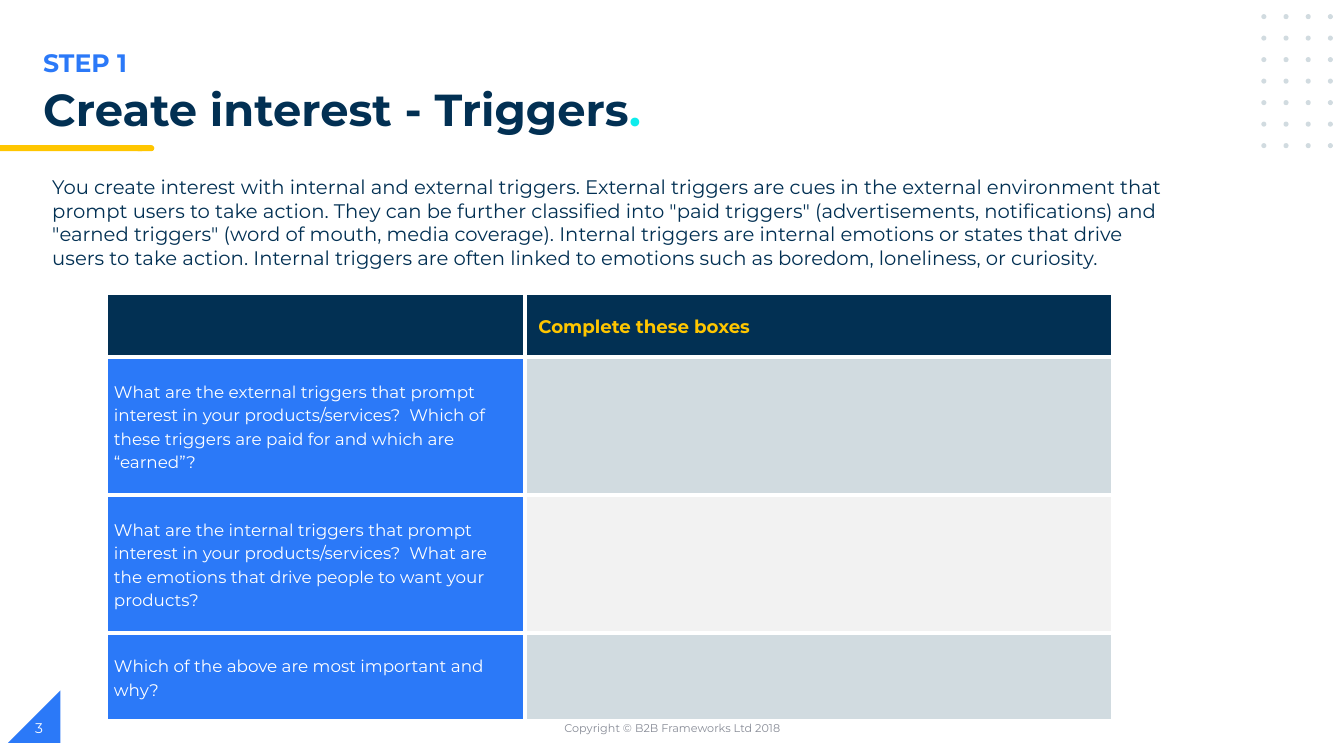
import pptx
import pptx.dml.color
import pptx.enum.shapes
import pptx.enum.text
import pptx.util
from lxml import etree
from pptx.oxml.ns import qn

Inches = pptx.util.Inches
Pt = pptx.util.Pt
SHAPES = pptx.enum.shapes.MSO_SHAPE
ANCHORS = pptx.enum.text.MSO_ANCHOR
ALIGN = pptx.enum.text.PP_ALIGN

COLORS = {
    "navy": "023053",
    "blue": "2B79F8",
    "yellow": "FFC600",
    "cyan": "0EECEC",
    "mist": "D1DBE0",
    "pale": "F2F2F2",
    "gray": "888C97",
    "white": "FFFFFF",
}

INTRO = (
    "You create interest with internal and external triggers. External triggers are cues "
    "in the external environment that prompt users to take action. They can be further "
    'classified into "paid triggers" (advertisements, notifications) and "earned triggers" '
    "(word of mouth, media coverage). Internal triggers are internal emotions or states that "
    "drive users to take action. Internal triggers are often linked to emotions such as "
    "boredom, loneliness, or curiosity."
)

# Height, question, answer, question fill, answer fill
TABLE_ROWS = [
    (0.63, "", "Complete these boxes", "navy", "navy"),
    (1.37, "What are the external triggers that prompt interest in your products/services?  "
     "Which of these triggers are paid for and which are “earned”?", "", "blue", "mist"),
    (1.37, "What are the internal triggers that prompt interest in your products/services?  "
     "What are the emotions that drive people to want your products?", "", "blue", "pale"),
    (0.87, "Which of the above are most important and why?", "", "blue", "mist"),
]


class SlideBuilder:
    """Holds the page being drawn and its text style."""

    def __init__(self, page, font_name="Montserrat"):
        self.page = page
        self.font_name = font_name

    def color(self, name):
        return pptx.dml.color.RGBColor.from_string(COLORS[name])

    def style_font(self, font, size, color, bold=False):
        font.name = self.font_name
        font.size = Pt(size)
        font.bold = bold
        font.color.rgb = self.color(color)

    def shape(self, kind, left, top, width, height, color, flip=False):
        shape = self.page.shapes.add_shape(
            kind, Inches(left), Inches(top), Inches(width), Inches(height))
        shape.shadow.inherit = False
        shape.fill.solid()
        shape.fill.fore_color.rgb = self.color(color)
        shape.line.fill.background()
        if flip:
            shape._element.spPr.get_or_add_xfrm().set("flipH", "1")

    def text(self, words, left, top, width, height, size, color, bold=False,
             align=ALIGN.LEFT, anchor=ANCHORS.TOP):
        """Add a one-paragraph text box and return the paragraph."""
        box = self.page.shapes.add_textbox(
            Inches(left), Inches(top), Inches(width), Inches(height))
        frame = box.text_frame
        frame.word_wrap = True
        frame.vertical_anchor = anchor
        frame.text = words
        para = frame.paragraphs[0]
        para.alignment = align
        self.style_font(para.runs[0].font, size, color, bold)
        return para

    def dot_grid(self, left, top, columns, rows, column_gap, row_gap):
        for row in range(rows):
            for column in range(columns):
                self.shape(SHAPES.OVAL, left + column * column_gap,
                           top + row * row_gap, 0.05, 0.05, "mist")

    def cell_borders(self, cell, color, width):
        properties = cell._tc.get_or_add_tcPr()
        for index, side in enumerate(("lnL", "lnR", "lnT", "lnB")):
            line = etree.Element(qn(f"a:{side}"), w=str(Pt(width)))
            fill = etree.SubElement(line, qn("a:solidFill"))
            etree.SubElement(fill, qn("a:srgbClr"), val=COLORS[color])
            properties.insert(index, line)

    def cell(self, cell, words, fill, size, color, bold, margin_left):
        cell.fill.solid()
        cell.fill.fore_color.rgb = self.color(fill)
        cell.vertical_anchor = ANCHORS.MIDDLE
        cell.margin_left = Inches(margin_left)
        cell.margin_right = Inches(0.08)
        cell.margin_top = cell.margin_bottom = 0
        self.cell_borders(cell, "white", 3)
        cell.text_frame.text = words
        para = cell.text_frame.paragraphs[0]
        para.line_spacing = 1.15
        self.style_font(para.font, size, color, bold)
        for span in para.runs:
            self.style_font(span.font, size, color, bold)

    def question_table(self, left, top, widths, rows):
        height = sum(row[0] for row in rows)
        frame = self.page.shapes.add_table(
            len(rows), len(widths), Inches(left), Inches(top),
            Inches(sum(widths)), Inches(height))
        table = frame.table
        table.first_row = table.horz_banding = False
        for column, width in zip(table.columns, widths):
            column.width = Inches(width)
        for index, (height, question, answer, question_fill, answer_fill) in enumerate(rows):
            table.rows[index].height = Inches(height)
            self.cell(table.cell(index, 0), question, question_fill, 12, "white", False, 0.08)
            self.cell(table.cell(index, 1), answer, answer_fill, 13, "yellow", True, 0.13)


def main():
    deck = pptx.Presentation()
    deck.slide_width = Inches(13.33)
    deck.slide_height = Inches(7.5)
    builder = SlideBuilder(deck.slides.add_slide(deck.slide_layouts[6]))

    builder.shape(SHAPES.RIGHT_TRIANGLE, 0.08, 6.85, 0.52, 0.52, "blue", flip=True)
    builder.shape(SHAPES.FLOWCHART_TERMINATOR, 1.34, 1.44, 0.19, 0.06, "yellow")
    builder.shape(SHAPES.RECTANGLE, 0, 1.44, 1.41, 0.06, "yellow")
    builder.dot_grid(12.51, 0.14, columns=4, rows=7, column_gap=0.22, row_gap=1.28 / 6)

    builder.text("STEP 1", 0.33, 0.42, 6.69, 0.4, 18, "blue", bold=True)
    title = builder.text("Create interest - Triggers", 0.33, 0.82, 7.76, 0.4,
                         32, "navy", bold=True)
    title.line_spacing = 0.9
    full_stop = title.add_run()
    full_stop.text = "."
    builder.style_font(full_stop.font, 32, "cyan", bold=True)

    builder.text("Copyright © B2B Frameworks Ltd 2018", 4.42, 7.02, 4.5, 0.4, 8, "gray",
                 align=ALIGN.CENTER, anchor=ANCHORS.MIDDLE)
    builder.text("3", 0.25, 7.02, 3, 0.4, 10, "white", anchor=ANCHORS.MIDDLE)
    builder.question_table(1.05, 2.91, [4.16, 5.83], TABLE_ROWS)
    builder.text(INTRO, 0.42, 1.69, 11.24, 1.04, 14, "navy")

    deck.save("out.pptx")


if __name__ == "__main__":
    main()
